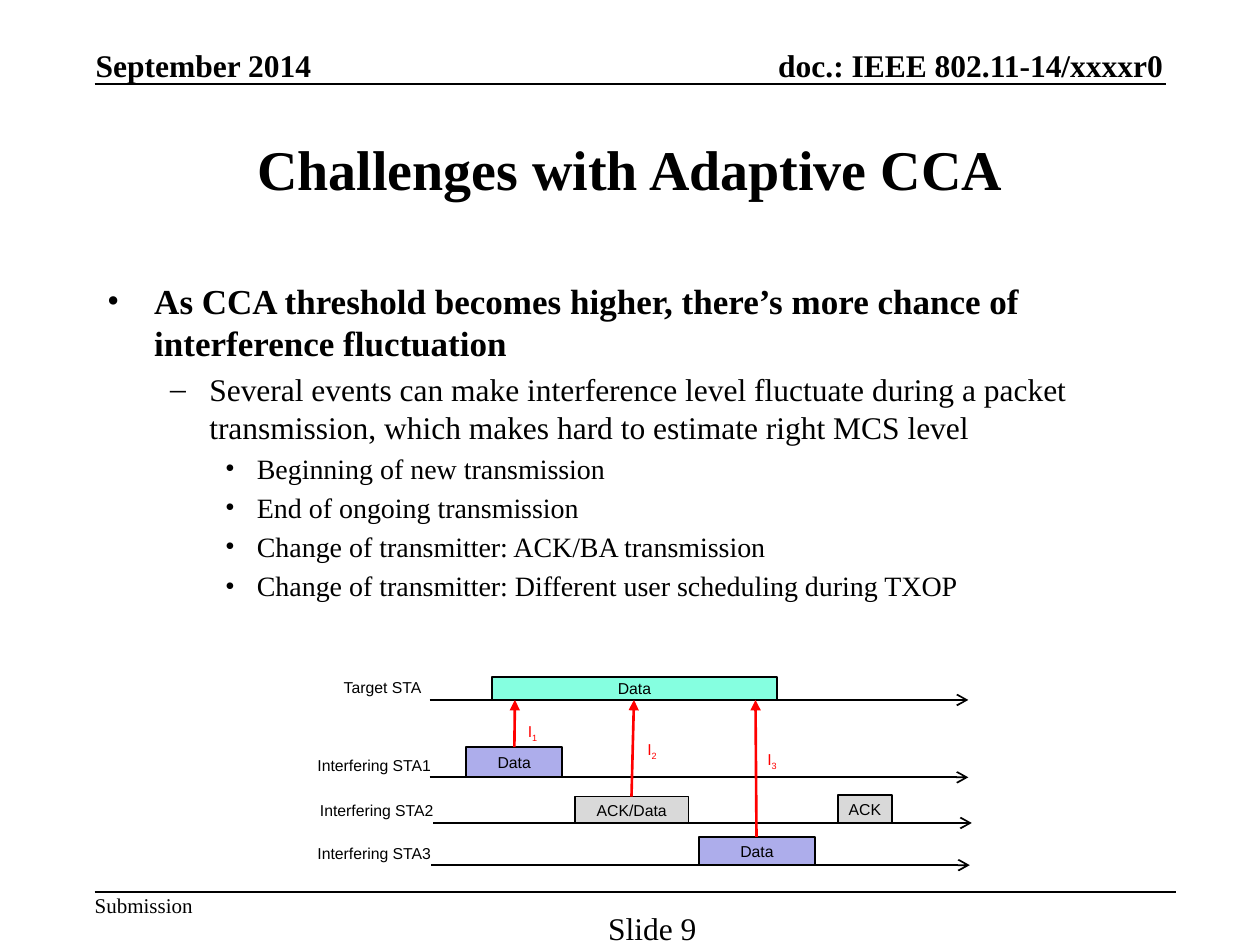
from typing import NamedTuple

from lxml.etree import SubElement
from pptx import Presentation
from pptx.dml.color import RGBColor
from pptx.enum.shapes import MSO_CONNECTOR, MSO_SHAPE
from pptx.enum.text import MSO_ANCHOR, PP_ALIGN
from pptx.oxml.ns import qn
from pptx.util import Cm, Pt

SERIF, SANS = "Times New Roman", "Arial"
BLACK, RED = "000000", "FF0000"
MINT, LILAC, GREY = "85FFE0", "ADADEB", "D9D9D9"
LEFT, CENTER, RIGHT = PP_ALIGN.LEFT, PP_ALIGN.CENTER, PP_ALIGN.RIGHT
TOP, MIDDLE, BOTTOM = MSO_ANCHOR.TOP, MSO_ANCHOR.MIDDLE, MSO_ANCHOR.BOTTOM
PAD = (0.25, 0.13)
AXIS = 10.86


class Bar(NamedTuple):
    text: str
    x: float
    w: float
    h: float
    fill: str


class Track(NamedTuple):
    name: str
    label_x: float
    label_w: float
    x: float
    y: float
    bars: tuple[Bar, ...]


class Hit(NamedTuple):
    """An interference arrow, and the place of its mark."""
    start: tuple[float, float]
    end: tuple[float, float]
    mark: tuple[float, float]


class Level(NamedTuple):
    size: int
    bold: bool
    sign: str
    margin: float
    hang: float


TRACKS = (
    Track("Target STA", 6.68, 2.16, 8.66, 14.11,
          (Bar("Data", 9.92, 5.74, 0.46, MINT),)),
    Track("Interfering STA1", 6.15, 2.84, 8.66, 15.67,
          (Bar("Data", 9.4, 1.93, 0.61, LILAC),)),
    Track("Interfering STA2", 6.2, 2.84, 8.73, 16.59,
          (Bar("ACK/Data", 11.59, 2.29, 0.53, GREY),
           Bar("ACK", 16.89, 1.09, 0.56, GREY))),
    Track("Interfering STA3", 6.15, 2.84, 8.69, 17.44,
          (Bar("Data", 14.09, 2.34, 0.56, LILAC),)),
)
HITS = (
    Hit((10.37, 15.06), (10.38, 14.11), (10.39, 14.43)),
    Hit((12.73, 16.06), (12.78, 14.11), (12.8, 14.78)),
    Hit((15.25, 16.87), (15.23, 14.11), (15.22, 14.98)),
)
LEVELS = (
    Level(20, True, "•", 0.95, 0.95),
    Level(18, False, "–", 2.06, 0.79),
    Level(16, False, "•", 3.02, 0.64),
)
POINTS = (
    (0, "As CCA threshold becomes higher, there’s more chance of "
        "interference fluctuation"),
    (1, "Several events can make interference level fluctuate during a "
        "packet transmission, which makes hard to estimate right MCS level"),
    (2, "Beginning of new transmission"),
    (2, "End of ongoing transmission"),
    (2, "Change of transmitter: ACK/BA transmission"),
    (2, "Change of transmitter: Different user scheduling during TXOP"),
)


def paint(target, color: str) -> None:
    """Give a fill, line or font a solid colour."""
    if hasattr(target, "solid"):
        target.solid()
        target.fore_color.rgb = RGBColor.from_string(color)
    else:
        target.color.rgb = RGBColor.from_string(color)


def set_frame(frame, pad=(0, 0), anchor=TOP, wrap=False) -> None:
    frame.word_wrap = wrap
    frame.vertical_anchor = anchor
    frame.margin_left = frame.margin_right = Cm(pad[0])
    frame.margin_top = frame.margin_bottom = Cm(pad[1])


def write(para, text: str, *, size=9, face=SANS, color=BLACK, bold=False,
          align=LEFT, sub=False) -> None:
    run = para.add_run()
    run.text = text
    para.alignment = align
    font = run.font
    font.size, font.name, font.bold = Pt(size), face, bold
    paint(font, color)
    if sub:
        font._element.set("baseline", "-25000")


def add_box(slide, x, y, w, h, **frame):
    box = slide.shapes.add_textbox(Cm(x), Cm(y), Cm(w), Cm(h))
    set_frame(box.text_frame, **frame)
    return box.text_frame


def add_line(slide, start, end, color=BLACK, width=1.0, head="") -> None:
    line = slide.shapes.add_connector(
        MSO_CONNECTOR.STRAIGHT, *(Cm(n) for n in (*start, *end)))
    paint(line.line, color)
    line.line.width = Pt(width)
    if head:
        SubElement(line.line._get_or_add_ln(), qn("a:tailEnd"), type=head)
    SubElement(line._element.spPr, qn("a:effectLst"))


def add_bar(slide, bar: Bar, base: float) -> None:
    """Stand a bar on its time axis."""
    shape = slide.shapes.add_shape(
        MSO_SHAPE.RECTANGLE, Cm(bar.x), Cm(base - bar.h), Cm(bar.w), Cm(bar.h))
    shape.shadow.inherit = False
    paint(shape.fill, bar.fill)
    paint(shape.line, BLACK)
    shape.line.width = Pt(1)
    set_frame(shape.text_frame, anchor=MIDDLE, wrap=True)
    write(shape.text_frame.paragraphs[0], bar.text, align=CENTER)


def add_track(slide, track: Track) -> None:
    add_line(slide, (track.x, track.y), (track.x + AXIS, track.y),
             head="arrow")
    label = add_box(slide, track.label_x, track.y - 0.57, track.label_w, 0.64,
                    pad=PAD)
    write(label.paragraphs[0], track.name)
    for bar in track.bars:
        add_bar(slide, bar, track.y)


def add_hit(slide, num: int, hit: Hit) -> None:
    add_line(slide, hit.start, hit.end, RED, 1.5, "triangle")
    para = add_box(slide, *hit.mark, 0.71, 0.64, pad=PAD).paragraphs[0]
    write(para, "I", color=RED)
    write(para, str(num), color=RED, sub=True)


def add_points(slide) -> None:
    frame = add_box(slide, 1.91, 5.51, 21.59, 8.05, pad=PAD, wrap=True)
    for i, (depth, text) in enumerate(POINTS):
        para = frame.add_paragraph() if i else frame.paragraphs[0]
        level = LEVELS[depth]
        para.level = depth
        if i:
            para.space_before = Pt(level.size * 0.2)
        props = para._p.get_or_add_pPr()
        props.set("marL", str(Cm(level.margin)))
        props.set("indent", str(-Cm(level.hang)))
        SubElement(props, qn("a:buFont"), typeface=SERIF)
        SubElement(props, qn("a:buChar"), char=level.sign)
        write(para, text, size=level.size, face=SERIF, bold=level.bold)


def add_page(slide) -> None:
    """Draw the header, title and footer."""
    for text, place, size, bold, align, frame in (
        ("doc.: IEEE 802.11-14/xxxxr0", (14.15, 0.93, 9.3, 0.76), 18, True,
         RIGHT, {"anchor": BOTTOM}),
        ("September 2014", (1.93, 0.93, 4.6, 0.76), 18, True, LEFT,
         {"anchor": BOTTOM}),
        ("Challenges with Adaptive CCA", (1.91, 1.9, 21.59, 2.97), 32, True,
         CENTER, {"anchor": MIDDLE, "pad": PAD, "wrap": True}),
        ("Submission", (1.91, 17.99, 2.2, 0.51), 12, False, LEFT, {}),
        ("Slide 9", (11.65, 18.32, 3, 0.71), 18, False, CENTER, {}),
    ):
        write(add_box(slide, *place, **frame).paragraphs[0], text, size=size,
              face=SERIF, bold=bold, align=align)
    add_line(slide, (1.91, 1.69), (23.5, 1.69))
    add_line(slide, (1.91, 17.99), (23.7, 17.99))


def main() -> None:
    deck = Presentation()
    deck.slide_width, deck.slide_height = Cm(25.4), Cm(19.05)
    slide = deck.slides.add_slide(deck.slide_layouts[6])
    add_page(slide)
    add_points(slide)
    for track in TRACKS:
        add_track(slide, track)
    for num, hit in enumerate(HITS, 1):
        add_hit(slide, num, hit)
    deck.save("out.pptx")


if __name__ == "__main__":
    main()
